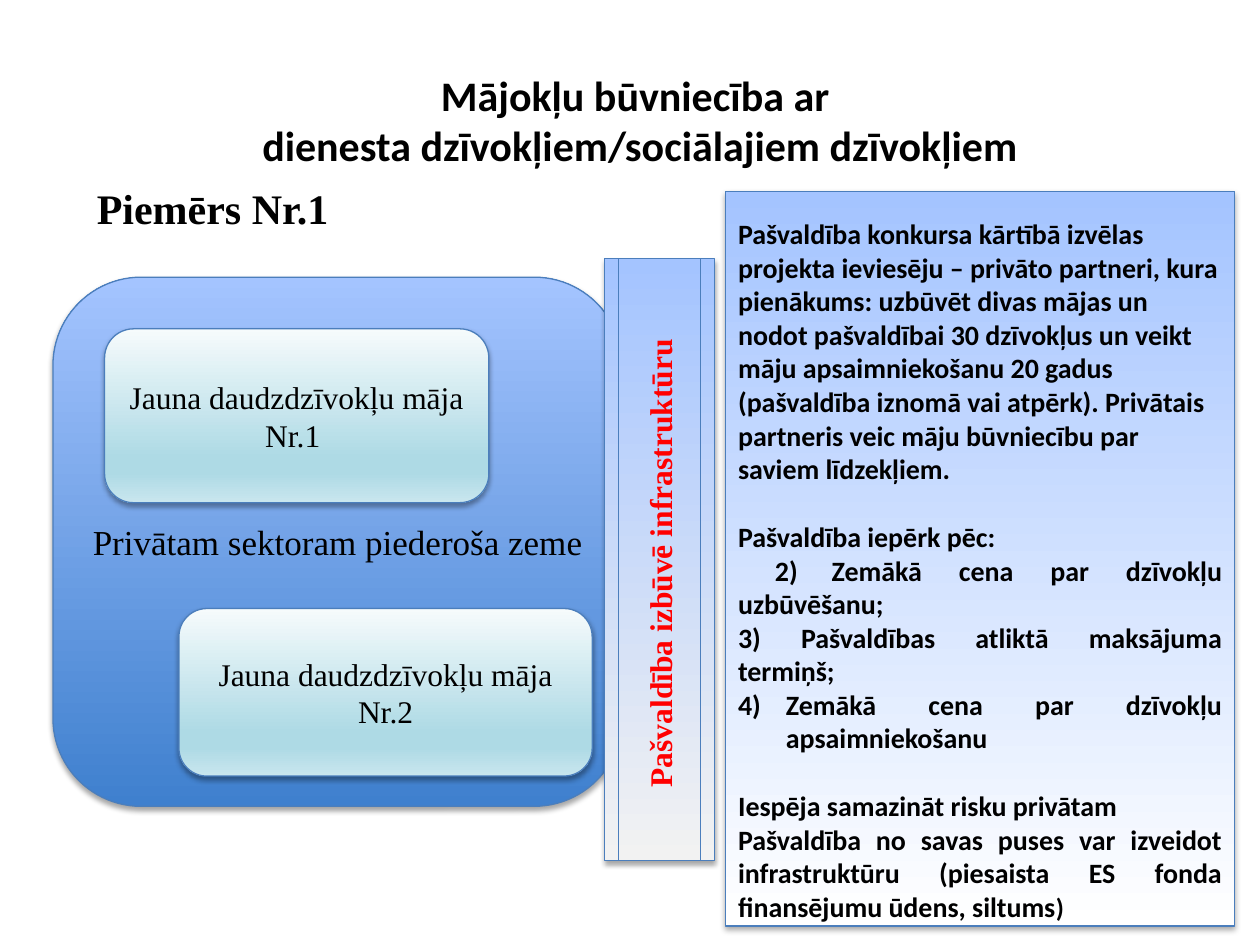
from lxml import etree
from pptx import Presentation
from pptx.dml.color import RGBColor
from pptx.enum.shapes import MSO_SHAPE
from pptx.enum.text import MSO_ANCHOR, PP_ALIGN
from pptx.oxml.ns import qn
from pptx.util import Inches, Pt

ROUND = MSO_SHAPE.ROUNDED_RECTANGLE
STRIP = MSO_SHAPE.FLOWCHART_PREDEFINED_PROCESS
RECT = MSO_SHAPE.RECTANGLE
TOP, MIDDLE = MSO_ANCHOR.TOP, MSO_ANCHOR.MIDDLE
LEFT, CENTER, JUSTIFY = PP_ALIGN.LEFT, PP_ALIGN.CENTER, PP_ALIGN.JUSTIFY

SANS, SERIF = "Calibri", "Times New Roman"
COLORS = {"ink": "000000", "red": "FF0000", "line": "4B7EBC"}
LAND = [(0, "3F80CE"), (100, "A4C4FF")]
HOUSE = [(0, "F6FBFC"), (74, "AEDAE5"), (83, "AEDAE5"), (100, "C9E6EE")]
GRAY = [(0, "F2F2F2"), (100, "A4C4FF")]
WHITE = [(0, "FFFFFF"), (100, "A4C4FF")]
UP, DOWN = 90, 270
GAP = 19.5


def add(parent, tag, **attrs):
    node = etree.SubElement(parent, qn(tag))
    for key, value in attrs.items():
        node.set(key, str(value))
    return node


class Deck:
    """Holds the style and the current slide."""

    def __init__(self):
        self.prs = Presentation()
        self.prs.slide_width, self.prs.slide_height = Inches(10), Inches(7.5)
        self.slide = self.prs.slides.add_slide(self.prs.slide_layouts[6])

    def style(self, para, size, face, bold=False, color="ink", align=LEFT):
        para.alignment = align
        font = para.font
        font.size, font.name, font.bold = Pt(size), face, bold
        font.color.rgb = RGBColor.from_string(COLORS[color])

    def text(self, box, words, size, face, **look):
        shape = self.slide.shapes.add_textbox(*map(Inches, box))
        frame = shape.text_frame
        frame.word_wrap = True
        frame.text = words
        self.style(frame.paragraphs[0], size, face, **look)

    def shade(self, shape, stops, angle):
        shape.fill.gradient()
        shape.fill.gradient_angle = angle
        stop_list = shape.fill._xPr.find(qn("a:gradFill")).find(qn("a:gsLst"))
        for old in list(stop_list):
            stop_list.remove(old)
        for place, color in stops:
            stop = add(stop_list, "a:gs", pos=place * 1000)
            add(stop, "a:srgbClr", val=color)

    def cast(self, shape):
        """Give the shape a soft shadow below it."""
        shape.shadow.inherit = False
        effects = shape._element.spPr.find(qn("a:effectLst"))
        shadow = add(effects, "a:outerShdw", blurRad=Pt(3.1), dist=Pt(1.8),
                     dir=90 * 60000, rotWithShape=0)
        add(add(shadow, "a:srgbClr", val=COLORS["ink"]), "a:alpha", val=35000)

    def block(self, kind, box, stops, angle):
        shape = self.slide.shapes.add_shape(kind, *map(Inches, box))
        self.shade(shape, stops, angle)
        shape.line.color.rgb = RGBColor.from_string(COLORS["line"])
        shape.line.width = Pt(0.75)
        self.cast(shape)
        frame = shape.text_frame
        frame.word_wrap = True
        frame.vertical_anchor = MIDDLE
        return frame

    def label(self, kind, box, stops, angle, words, size, **look):
        frame = self.block(kind, box, stops, angle)
        frame.text = words
        self.style(frame.paragraphs[0], size, SERIF, align=CENTER, **look)
        return frame

    def number(self, para, start):
        """Turn the paragraph into a numbered item with a hanging indent."""
        props = para._p.get_or_add_pPr()
        props.set("marL", str(Inches(0.38)))
        props.set("indent", str(-Inches(0.38)))
        add(props, "a:buFont", typeface="+mj-lt")
        add(props, "a:buAutoNum", type="arabicParenR", startAt=start)

    def panel(self, box, items):
        frame = self.block(RECT, box, WHITE, UP)
        frame.vertical_anchor = TOP
        frame.margin_top = Inches(0.2)
        for index, (words, align, before, start) in enumerate(items):
            para = frame.paragraphs[0] if index == 0 else frame.add_paragraph()
            para.text = words
            if before:
                para.space_before = Pt(before)
            if start:
                self.number(para, start)
            self.style(para, 16, SANS, bold=True, align=align)
        mark = para.add_run()
        mark.text = ")"
        mark.font.size = Pt(15)


def main():
    deck = Deck()
    deck.text((0.83, 0.5, 8.5, 1.43),
              "Mājokļu būvniecība ar \vdienesta dzīvokļiem/sociālajiem dzīvokļiem",
              24, SANS, bold=True, align=CENTER)
    deck.text((0.67, 1.4, 8.42, 1.38), "Piemērs Nr.1", 24, SERIF, bold=True)

    deck.label(ROUND, (0.42, 2.2, 4.52, 4.2), LAND, UP,
               "Privātam sektoram piederoša zeme ", 20)
    houses = [((0.83, 2.61, 3.05, 1.38), "Jauna daudzdzīvokļu māja Nr.1 "),
              ((1.42, 4.83, 3.28, 1.33), "Jauna daudzdzīvokļu māja Nr.2")]
    for box, words in houses:
        deck.label(ROUND, box, HOUSE, DOWN, words, 18)

    strip = deck.label(STRIP, (4.8, 2.05, 0.87, 4.78), GRAY, UP,
                       "Pašvaldība izbūvē infrastruktūru ", 18,
                       bold=True, color="red")
    strip._txBody.bodyPr.set("vert", "vert270")

    deck.panel((5.76, 1.52, 4.04, 5.83), [
        ("Pašvaldība konkursa kārtībā izvēlas projekta ieviesēju – privāto "
         "partneri, kura pienākums: uzbūvēt divas mājas un nodot pašvaldībai "
         "30 dzīvokļus un veikt māju apsaimniekošanu 20 gadus (pašvaldība "
         "iznomā vai atpērk). Privātais partneris veic māju būvniecību par "
         "saviem līdzekļiem.", LEFT, 0, None),
        ("Pašvaldība iepērk pēc:", LEFT, GAP, None),
        (" 2)\tZemākā cena par dzīvokļu uzbūvēšanu;", JUSTIFY, 0, None),
        ("3)\tPašvaldības atliktā maksājuma termiņš;", JUSTIFY, 0, None),
        ("Zemākā cena par dzīvokļu apsaimniekošanu", JUSTIFY, 0, 4),
        ("Iespēja samazināt risku privātam", JUSTIFY, GAP, None),
        ("Pašvaldība no savas puses var izveidot infrastruktūru (piesaista "
         "ES fonda finansējumu ūdens, siltums", JUSTIFY, 0, None),
    ])
    deck.prs.save("out.pptx")


if __name__ == "__main__":
    main()
